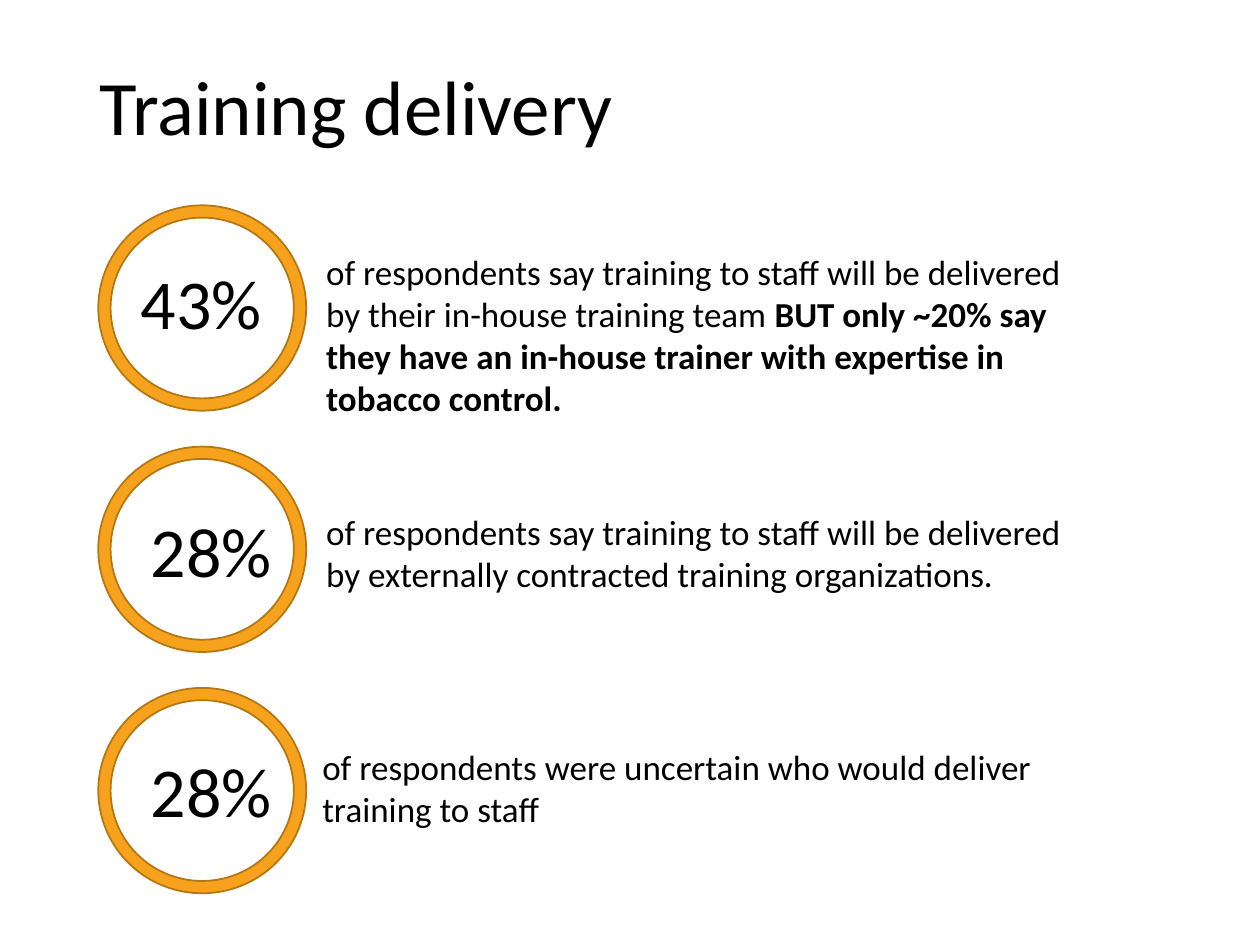
from pptx import Presentation
from pptx.dml.color import RGBColor
from pptx.enum.shapes import MSO_SHAPE
from pptx.enum.text import MSO_ANCHOR
from pptx.util import Inches, Pt

HUES = {"ink": "000000", "ring": "F6A21D", "edge": "B57612"}
WIDE, HIGH = 10, 7.5
TOP, STEP = 1.63, 1.915
ROWS = [
    ("43%", 1.02, 0.38, 2.49, 0.31, 1.45, [
        ("of respondents say training to staff will be delivered "
         "by their in-house training team ", False),
        ("BUT only ~20% say they have an in-house trainer with "
         "expertise in tobacco control.", True)]),
    ("28%", 1.1, 0.43, 2.49, 0.46, 0.77, [
        ("of respondents say training to staff will be delivered "
         "by externally contracted training organizations.", False)]),
    ("28%", 1.1, 0.42, 2.46, 0.41, 0.77, [
        ("of respondents were uncertain who would deliver "
         "training to staff", False)]),
]


def hue(name):
    """Return the named colour."""
    return RGBColor.from_string(HUES[name])


def write(slide, runs, box, size=20, anchor=MSO_ANCHOR.TOP, space=1.0):
    """Add a text box holding (text, bold) runs."""
    frame = slide.shapes.add_textbox(*map(Inches, box)).text_frame
    frame.word_wrap = True
    frame.vertical_anchor = anchor
    para = frame.paragraphs[0]
    para.line_spacing = space
    for text, bold in runs:
        run = para.add_run()
        run.text = text
        font = run.font
        font.name, font.size, font.bold = "Calibri", Pt(size), bold
        font.color.rgb = hue("ink")


def ring(slide, top):
    """Add one thin ring in the left column."""
    box = map(Inches, (0.78, top, 1.65, 1.63))
    shape = slide.shapes.add_shape(MSO_SHAPE.DONUT, *box)
    shape.adjustments[0] = 0.06
    shape.shadow.inherit = False
    shape.fill.solid()
    shape.fill.fore_color.rgb = hue("ring")
    shape.line.color.rgb = hue("edge")
    shape.line.width = Pt(1)


def fact(slide, top, share, left, drop, side, fall, high, runs):
    """Add a ring with its share and the finding beside it."""
    ring(slide, top)
    write(slide, [(share, False)], (left, top + drop, 1.16, 0.77), size=40)
    write(slide, runs, (side, top + fall, 6.27, high))


def main():
    """Build and save the slide."""
    deck = Presentation()
    deck.slide_width, deck.slide_height = Inches(WIDE), Inches(HIGH)
    slide = deck.slides.add_slide(deck.slide_layouts[6])
    write(slide, [("Training delivery", False)], (0.69, 0.4, 8.62, 0.95),
          size=44, anchor=MSO_ANCHOR.MIDDLE, space=0.9)
    for row, data in enumerate(ROWS):
        fact(slide, TOP + row * STEP, *data)
    deck.save("out.pptx")


if __name__ == "__main__":
    main()
